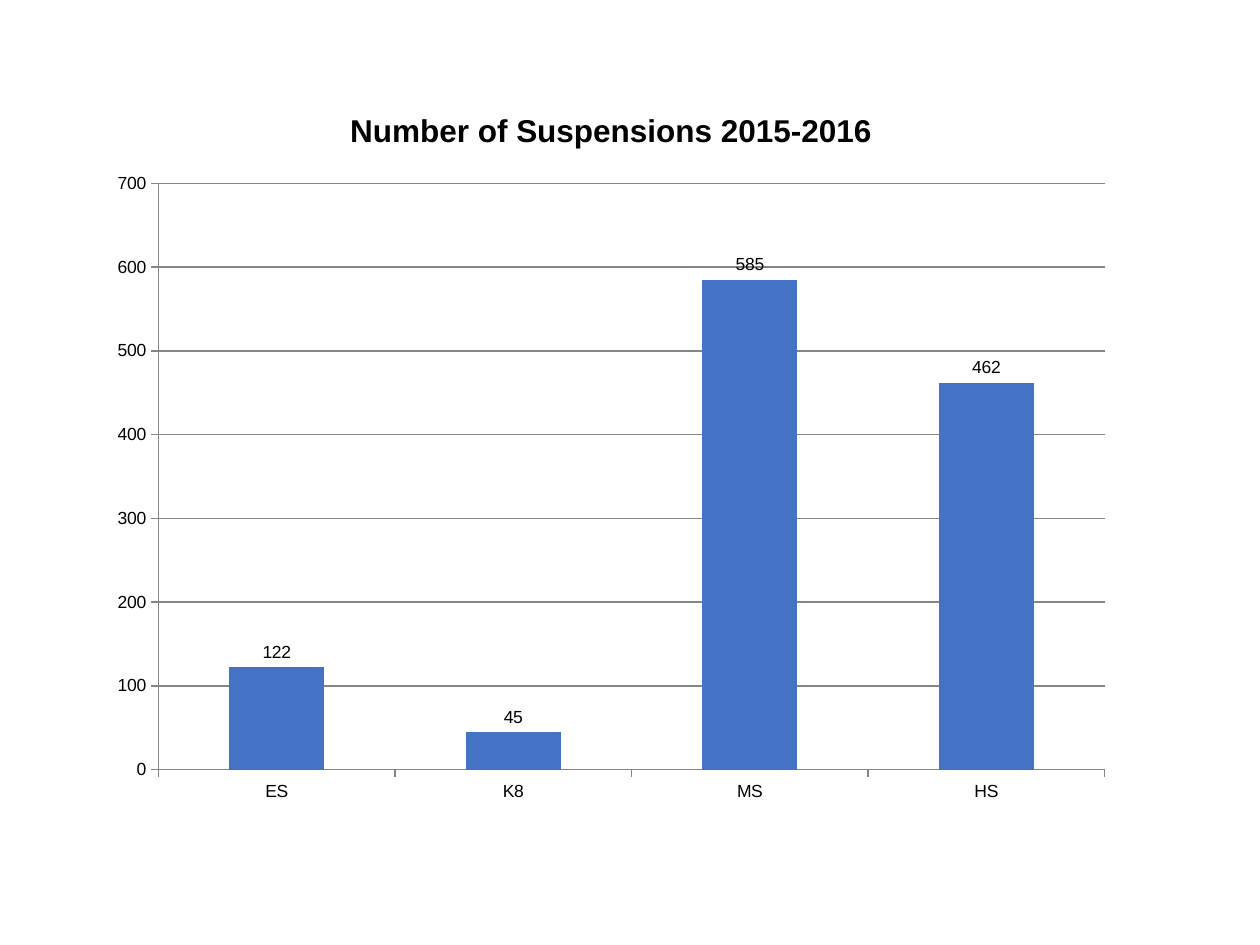
"""Build a slide with a column chart of suspensions by school level."""
from pptx import Presentation
from pptx.chart.data import CategoryChartData
from pptx.dml.color import RGBColor
from pptx.enum.chart import XL_CHART_TYPE, XL_LABEL_POSITION, XL_TICK_MARK
from pptx.util import Inches, Pt

COLUMN = XL_CHART_TYPE.COLUMN_CLUSTERED
OUTSIDE_END = XL_LABEL_POSITION.OUTSIDE_END
TICK_OUT, TICK_NONE = XL_TICK_MARK.OUTSIDE, XL_TICK_MARK.NONE
BLACK = RGBColor(0x00, 0x00, 0x00)
GRAY = RGBColor(0x86, 0x86, 0x86)
BLUE = RGBColor(0x44, 0x72, 0xC4)
FONT = "Arial"
TITLE = "Number of Suspensions 2015-2016"
SUSPENSIONS = {"ES": 122, "K8": 45, "MS": 585, "HS": 462}


def add_text(tf, text, size=10, bold=False, color=BLACK):
    r = tf.paragraphs[0].add_run()
    r.text = text
    r.font.name, r.font.size, r.font.bold = FONT, Pt(size), bold
    r.font.color.rgb = color


prs = Presentation()
prs.slide_width, prs.slide_height = Inches(10), Inches(7.5)
s = prs.slides.add_slide(prs.slide_layouts[6])

data = CategoryChartData()
data.categories = list(SUSPENSIONS)
data.add_series(TITLE, list(SUSPENSIONS.values()))
chart = s.shapes.add_chart(
    COLUMN, Inches(0.77), Inches(0.66), Inches(8.16), Inches(5.82), data
).chart
chart.font.name, chart.font.size = FONT, Pt(10)
chart.font.color.rgb = BLACK
chart.has_legend = False
chart.has_title = True
add_text(chart.chart_title.text_frame, TITLE, size=18, bold=True)
chart.chart_title.include_in_layout = False

value_axis = chart.value_axis
value_axis.minimum_scale, value_axis.maximum_scale = 0, 700
value_axis.major_unit = 100
value_axis.has_major_gridlines = True
for axis in (chart.category_axis, value_axis):
    axis.major_tick_mark, axis.minor_tick_mark = TICK_OUT, TICK_NONE
for part in (chart.category_axis, value_axis, value_axis.major_gridlines):
    part.format.line.color.rgb = GRAY
    part.format.line.width = Pt(0.75)

plot = chart.plots[0]
plot.gap_width = 150
plot.vary_by_categories = False
series = plot.series[0]
series.format.fill.solid()
series.format.fill.fore_color.rgb = BLUE
labels = series.data_labels
labels.show_value = True
labels.position = OUTSIDE_END

prs.save("out.pptx")
